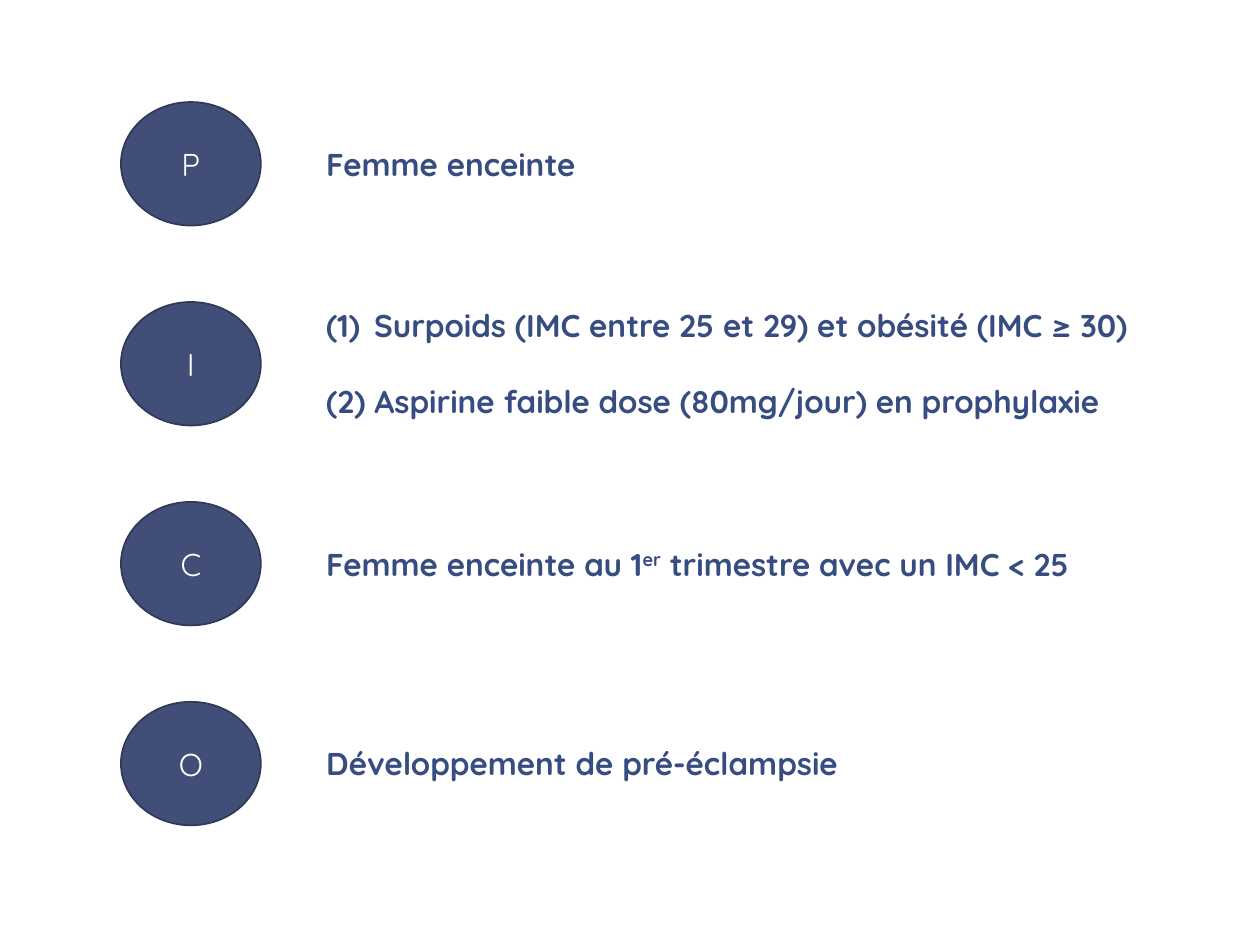
from dataclasses import dataclass

from lxml.etree import SubElement
from pptx import Presentation
from pptx.dml.color import RGBColor
from pptx.enum.shapes import MSO_SHAPE
from pptx.enum.text import MSO_ANCHOR, PP_ALIGN
from pptx.oxml.ns import qn
from pptx.util import Inches, Pt


@dataclass(frozen=True)
class Theme:
    font: str = "Quicksand"
    size: Pt = Pt(18)
    paragraph_gap: Pt = Pt(21.5)
    circle_fill: RGBColor = RGBColor(0x41, 0x4E, 0x77)
    circle_line: RGBColor = RGBColor(0x30, 0x3A, 0x58)
    letter: RGBColor = RGBColor(0xFF, 0xFF, 0xFF)
    body: RGBColor = RGBColor(0x37, 0x4C, 0x81)


class PicoSlide:
    """Draws lettered circles and their descriptions on one slide."""

    def __init__(self, slide, theme):
        self.slide = slide
        self.theme = theme

    def style(self, run, color, bold=False):
        run.font.name = self.theme.font
        run.font.size = self.theme.size
        run.font.bold = bold
        run.font.color.rgb = color

    def circle(self, letter, center):
        width, height = Inches(1.11), Inches(0.98)
        shape = self.slide.shapes.add_shape(
            MSO_SHAPE.OVAL, Inches(0.96), center - height // 2, width, height
        )
        shape.shadow.inherit = False
        shape.fill.solid()
        shape.fill.fore_color.rgb = self.theme.circle_fill
        shape.line.color.rgb = self.theme.circle_line
        shape.line.width = Pt(1)
        text_frame = shape.text_frame
        text_frame.text = letter
        text_frame.vertical_anchor = MSO_ANCHOR.MIDDLE
        paragraph = text_frame.paragraphs[0]
        paragraph.alignment = PP_ALIGN.CENTER
        self.style(paragraph.runs[0], self.theme.letter)

    def description(self, paragraphs, center, height, numbered=False):
        shape = self.slide.shapes.add_textbox(
            Inches(2.49), center - height // 2, Inches(7.39), height
        )
        text_frame = shape.text_frame
        text_frame.word_wrap = True
        for index, parts in enumerate(paragraphs):
            paragraph = text_frame.add_paragraph() if index else text_frame.paragraphs[0]
            if index:
                paragraph.space_before = self.theme.paragraph_gap
            elif numbered:
                self.number(paragraph)
            for text, raised in parts:
                run = paragraph.add_run()
                run.text = text
                self.style(run, self.theme.body, bold=True)
                if raised:
                    run.font._element.set("baseline", "30000")

    def number(self, paragraph):
        properties = paragraph._p.get_or_add_pPr()
        properties.set("marL", str(Inches(0.38)))
        properties.set("indent", str(-Inches(0.38)))
        SubElement(properties, qn("a:buFont"), typeface="+mj-lt")
        SubElement(properties, qn("a:buAutoNum"), type="arabicParenBoth")


def main():
    presentation = Presentation()
    presentation.slide_width = Inches(10)
    presentation.slide_height = Inches(7.5)
    slide = presentation.slides.add_slide(presentation.slide_layouts[6])
    pico = PicoSlide(slide, Theme())

    rows = [
        ("P", [[("Femme enceinte", False)]]),
        ("I", [
            [("Surpoids (IMC entre 25 et 29) et obésité (IMC ≥ 30)", False)],
            [("(2) Aspirine faible dose (80mg/jour) en prophylaxie", False)],
        ]),
        ("C", [[
            ("Femme enceinte au 1", False),
            ("er", True),
            (" trimestre avec un IMC < 25", False),
        ]]),
        ("O", [[("Développement de pré-éclampsie", False)]]),
    ]
    first_center, last_center = Inches(1.3), Inches(6.06)
    pitch = (last_center - first_center) // (len(rows) - 1)
    for index, (letter, paragraphs) in enumerate(rows):
        center = first_center + index * pitch
        several = len(paragraphs) > 1
        pico.circle(letter, center)
        pico.description(
            paragraphs, center, Inches(1.01 if several else 0.4), numbered=several
        )

    presentation.save("out.pptx")


if __name__ == "__main__":
    main()
